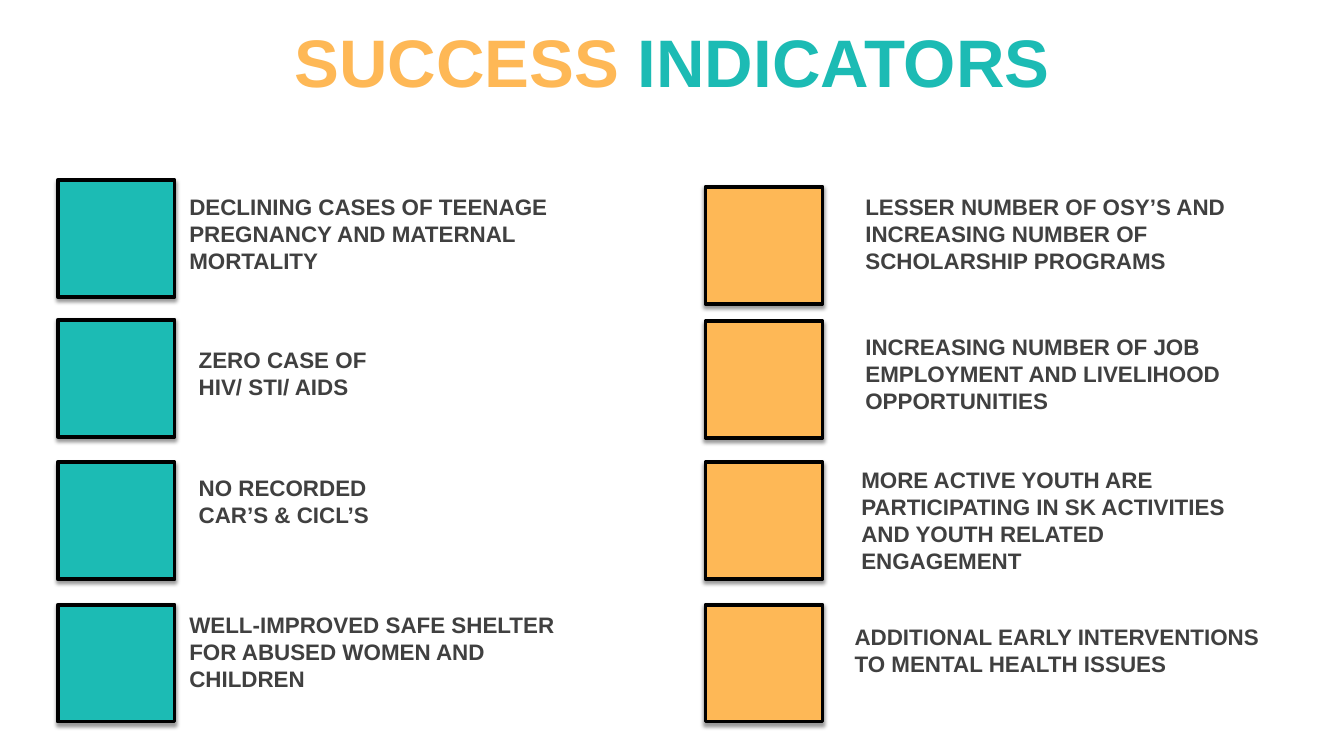
from lxml import etree
from pptx import Presentation
from pptx.dml.color import RGBColor
from pptx.enum import shapes, text
from pptx.oxml import ns
from pptx.util import Inches, Pt

TEAL, ORANGE, GRAY, BLACK = "1CBBB4", "FEB856", "404040", "000000"
SIDE = 0.87

# Per column: left of squares, colour, then (square top, text left, top, width, height, wording)
COLUMNS = [
    (0.43, TEAL, [
        (1.34, 1.31, 1.39, 2.92, 0.71,
         "DECLINING CASES OF TEENAGE PREGNANCY AND MATERNAL MORTALITY"),
        (2.38, 1.38, 2.53, 1.65, 0.5, "ZERO CASE OF HIV/ STI/ AIDS"),
        (3.44, 1.38, 3.48, 1.8, 0.5, "NO RECORDED CAR’S & CICL’S"),
        (4.5, 1.31, 4.5, 2.92, 0.71,
         "WELL-IMPROVED SAFE SHELTER FOR ABUSED WOMEN AND CHILDREN"),
    ]),
    (5.25, ORANGE, [
        (1.39, 6.34, 1.39, 2.92, 0.71,
         "LESSER NUMBER OF OSY’S AND INCREASING NUMBER OF SCHOLARSHIP PROGRAMS"),
        (2.39, 6.34, 2.43, 2.92, 0.71,
         "INCREASING NUMBER OF JOB EMPLOYMENT AND LIVELIHOOD OPPORTUNITIES"),
        (3.44, 6.31, 3.42, 2.92, 0.91,
         "MORE ACTIVE YOUTH ARE PARTICIPATING IN SK ACTIVITIES "
         "AND YOUTH RELATED ENGAGEMENT"),
        (4.5, 6.26, 4.59, 3.31, 0.5,
         "ADDITIONAL EARLY INTERVENTIONS TO MENTAL HEALTH ISSUES"),
    ]),
]


def color(value):
    return RGBColor.from_string(value)


def add_span(para, wording, size=12, fill=GRAY, bold=True, font="Arial"):
    span = para.add_run()
    span.text = wording
    span.font.name, span.font.size, span.font.bold = font, Pt(size), bold
    span.font.color.rgb = color(fill)


def add_title(page):
    title = page.shapes.title
    title.left, title.top = Inches(0), Inches(0.03)
    title.width, title.height = Inches(10), Inches(0.85)
    title.text_frame.vertical_anchor = text.MSO_ANCHOR.MIDDLE
    para = title.text_frame.paragraphs[0]
    para.alignment = text.PP_ALIGN.CENTER
    add_span(para, "SUCCESS ", size=36, fill=ORANGE)
    add_span(para, "INDICATORS", size=36, fill=TEAL)


def add_shadow(shape):
    """Soft black shadow falling straight down."""
    shape.shadow.inherit = False
    effects = shape.element.spPr.find(ns.qn("a:effectLst"))
    shadow = etree.SubElement(
        effects, ns.qn("a:outerShdw"), blurRad=str(Pt(2)), dist=str(Pt(1.5)),
        dir="5400000", rotWithShape="0")
    tint = etree.SubElement(shadow, ns.qn("a:srgbClr"), val=BLACK)
    etree.SubElement(tint, ns.qn("a:alpha"), val="40000")


def add_square(page, left, top, fill):
    square = page.shapes.add_shape(
        shapes.MSO_SHAPE.RECTANGLE, Inches(left), Inches(top), Inches(SIDE), Inches(SIDE))
    square.fill.solid()
    square.fill.fore_color.rgb = color(fill)
    square.line.color.rgb = color(BLACK)
    square.line.width = Pt(2)
    add_shadow(square)


def add_label(page, left, top, width, height, wording):
    box = page.shapes.add_textbox(Inches(left), Inches(top), Inches(width), Inches(height))
    box.text_frame.word_wrap = True
    box.text_frame.auto_size = text.MSO_AUTO_SIZE.SHAPE_TO_FIT_TEXT
    add_span(box.text_frame.paragraphs[0], wording)


def main():
    # Widescreen page, 16:9
    deck = Presentation()
    deck.slide_width = Inches(10)
    deck.slide_height = Inches(10) * 9 // 16
    page = deck.slides.add_slide(deck.slide_layouts[5])
    add_title(page)

    # Two columns of indicators
    for square_left, fill, indicators in COLUMNS:
        for square_top, *label in indicators:
            add_square(page, square_left, square_top, fill)
            add_label(page, *label)

    deck.save("out.pptx")


if __name__ == "__main__":
    main()
